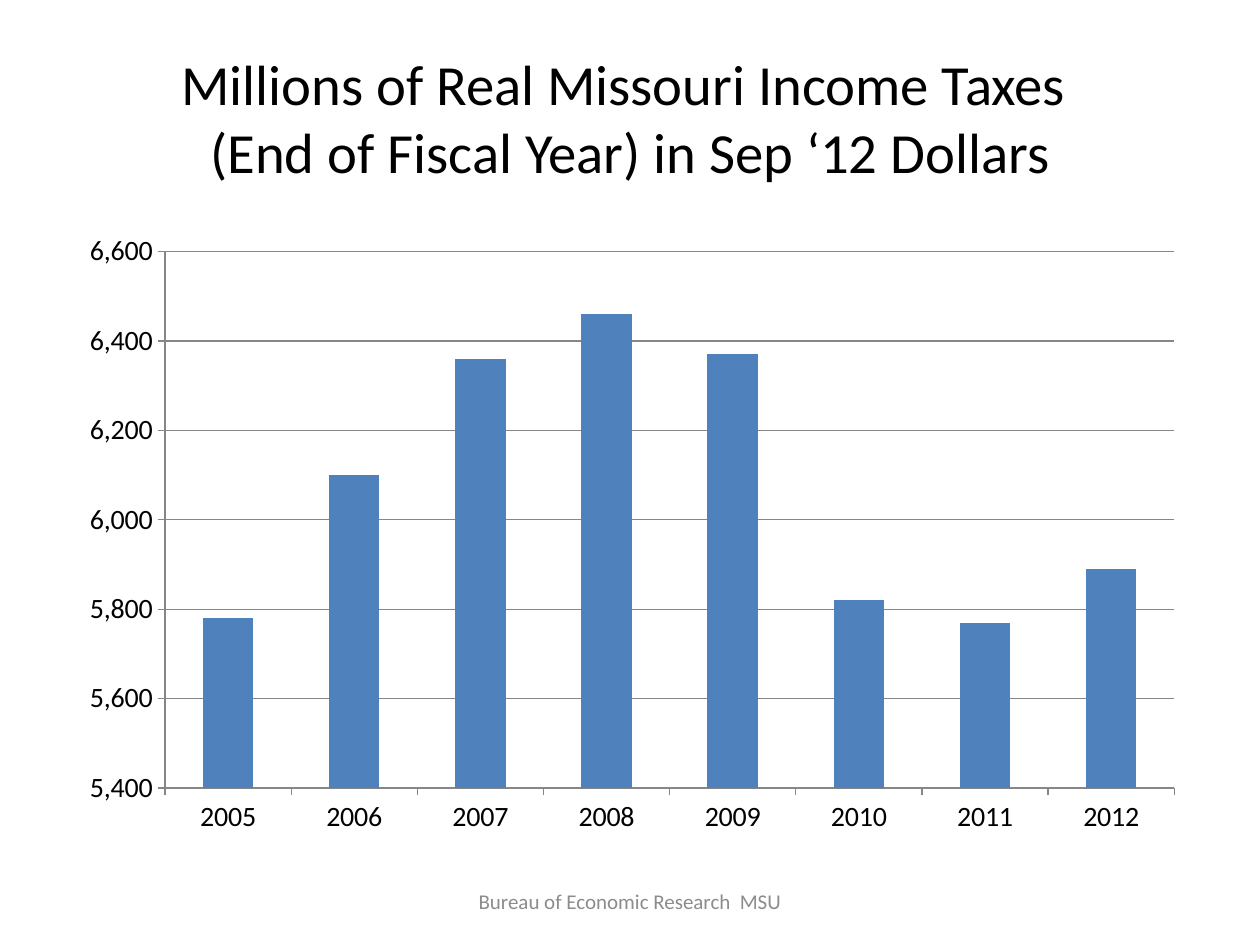
from dataclasses import dataclass

from lxml.etree import SubElement
from pptx import Presentation
from pptx.chart.data import CategoryChartData
from pptx.dml.color import RGBColor
from pptx.enum.chart import XL_CHART_TYPE, XL_TICK_MARK
from pptx.enum.text import MSO_ANCHOR, PP_ALIGN
from pptx.oxml.ns import qn
from pptx.util import Pt


@dataclass(frozen=True)
class Theme:
    font: str = "Calibri"
    text: RGBColor = RGBColor(0x00, 0x00, 0x00)
    muted: RGBColor = RGBColor(0x8C, 0x8C, 0x8C)
    axis: RGBColor = RGBColor(0x86, 0x86, 0x86)
    bars: RGBColor = RGBColor(0x4F, 0x81, 0xBD)
    title_size: float = 32.4
    chart_size: float = 16
    footer_size: float = 12


THEME = Theme()
TITLE = "Millions of Real Missouri Income Taxes \v(End of Fiscal Year) in Sep ‘12 Dollars"
FOOTER = "Bureau of Economic Research  MSU"
TAXES_BY_YEAR = {
    "2005": 5780, "2006": 6100, "2007": 6360, "2008": 6460,
    "2009": 6370, "2010": 5820, "2011": 5770, "2012": 5890,
}


def style_font(font, size, color):
    font.name = THEME.font
    font.size = Pt(size)
    font.color.rgb = color


def set_centred_text(holder, text, size, color):
    frame = holder.text_frame
    frame.word_wrap = True
    frame.vertical_anchor = MSO_ANCHOR.MIDDLE
    frame.text = text
    paragraph = frame.paragraphs[0]
    paragraph.alignment = PP_ALIGN.CENTER
    style_font(paragraph.font, size, color)


def add_title(slide):
    title = slide.shapes.title
    title.left, title.top, title.width, title.height = Pt(36), Pt(21.6), Pt(648), Pt(90)
    set_centred_text(title, TITLE, THEME.title_size, THEME.text)


def style_line(line):
    line.color.rgb = THEME.axis
    line.width = Pt(0.75)


def style_axis(axis):
    axis.major_tick_mark = XL_TICK_MARK.OUTSIDE
    axis.minor_tick_mark = XL_TICK_MARK.NONE
    style_line(axis.format.line)


def add_tax_chart(slide):
    data = CategoryChartData(number_format="#,##0")
    data.categories = list(TAXES_BY_YEAR)
    data.add_series("Series 1", list(TAXES_BY_YEAR.values()))
    chart = slide.shapes.add_chart(
        XL_CHART_TYPE.COLUMN_CLUSTERED, Pt(36), Pt(126), Pt(648), Pt(356.4), data
    ).chart
    chart.has_legend = False
    chart.has_title = False
    style_font(chart.font, THEME.chart_size, THEME.text)

    years, dollars = chart.category_axis, chart.value_axis
    style_axis(years)
    style_axis(dollars)
    years.has_major_gridlines = False
    dollars.has_major_gridlines = True
    style_line(dollars.major_gridlines.format.line)
    dollars.minimum_scale, dollars.maximum_scale = 5400, 6600
    dollars.major_unit = 200
    dollars.tick_labels.number_format = "#,##0"
    dollars.tick_labels.number_format_is_linked = False

    plot = chart.plots[0]
    plot.gap_width = 150
    plot.vary_by_categories = False
    bar_fill = plot.series[0].format.fill
    bar_fill.solid()
    bar_fill.fore_color.rgb = THEME.bars
    place_plot_area(chart, x=0.09, y=0.05, w=0.89, h=0.86)


def place_plot_area(chart, **fractions):
    """Fix the inner plot area as fractions of the chart's frame."""
    plot_area = chart.plots[0]._element.getparent()
    layout = plot_area.find(qn("c:layout"))
    if layout is None:
        layout = SubElement(plot_area, qn("c:layout"))
        plot_area.insert(0, layout)
    manual = SubElement(layout, qn("c:manualLayout"))
    SubElement(manual, qn("c:layoutTarget")).set("val", "inner")
    for side in "xy":
        SubElement(manual, qn(f"c:{side}Mode")).set("val", "edge")
    for side, fraction in fractions.items():
        SubElement(manual, qn(f"c:{side}")).set("val", str(fraction))


def add_footer(slide):
    footer = slide.shapes.add_textbox(Pt(246), Pt(500.4), Pt(228), Pt(28.8))
    set_centred_text(footer, FOOTER, THEME.footer_size, THEME.muted)


def main():
    deck = Presentation()
    deck.slide_width, deck.slide_height = Pt(720), Pt(540)
    slide = deck.slides.add_slide(deck.slide_layouts.get_by_name("Title Only"))
    add_title(slide)
    add_tax_chart(slide)
    add_footer(slide)
    deck.save("out.pptx")


if __name__ == "__main__":
    main()
